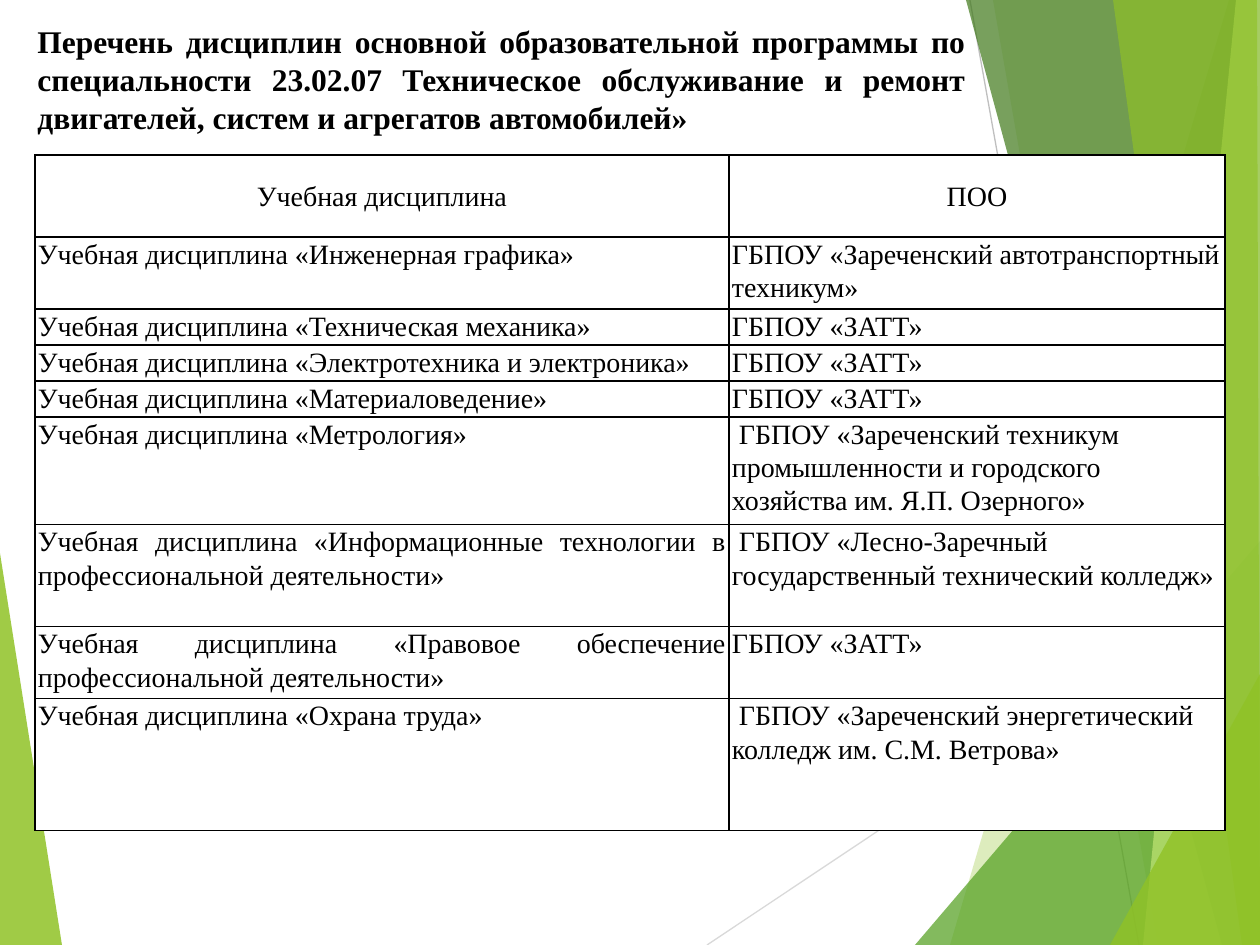
from lxml.etree import SubElement
from pptx import Presentation
from pptx.dml.color import RGBColor
from pptx.enum.shapes import MSO_CONNECTOR
from pptx.enum.text import MSO_ANCHOR as ANCHOR, PP_ALIGN as ALIGN
from pptx.oxml.ns import qn
from pptx.util import Emu, Pt

PX = 914400 / 126
WIDTH, HEIGHT = 1260, 945
FONT = "Times New Roman"
BLACK, WHITE = "000000", "FFFFFF"

TITLE = ("Перечень дисциплин основной образовательной программы по специальности "
         "23.02.07 Техническое обслуживание и ремонт двигателей, систем и агрегатов "
         "автомобилей»")
TITLE_BOX = (25, 16, 953, 181)

HEADINGS = ("Учебная дисциплина", "ПОО")
DISCIPLINES = [
    ("Инженерная графика", "ГБПОУ «Зареченский автотранспортный техникум»", 72),
    ("Техническая механика", "ГБПОУ «ЗАТТ»", 36),
    ("Электротехника и электроника", "ГБПОУ «ЗАТТ»", 36),
    ("Материаловедение", "ГБПОУ «ЗАТТ»", 36),
    ("Метрология",
     " ГБПОУ «Зареченский техникум промышленности и городского хозяйства им. Я.П. Озерного»", 106),
    ("Информационные технологии в профессиональной деятельности",
     " ГБПОУ «Лесно-Заречный государственный технический колледж»", 102),
    ("Правовое обеспечение профессиональной деятельности", "ГБПОУ «ЗАТТ»", 72),
    ("Охрана труда", " ГБПОУ «Зареченский энергетический колледж им. С.М. Ветрова»", 132),
]
TABLE_LEFT, TABLE_TOP = 35, 155
COLUMN_WIDTHS = (694, 496)
HEADING_HEIGHT = 82

LEFT_FACET = ([(0, 553), (62, HEIGHT), (0, HEIGHT)], "90C226", 85)
RAYS = [
    ((707, HEIGHT), (WIDTH, 576), "D9D9D9"),
    ((970, 0), (1139, HEIGHT), "BFBFBF"),
]
RIGHT_FACETS = [
    ([(1229, 0), (950, HEIGHT), (WIDTH, HEIGHT), (WIDTH, 0)], "90C226", 30),
    ([(993, 0), (1158, HEIGHT), (WIDTH, HEIGHT), (WIDTH, 0)], "90C226", 20),
    ([(915, HEIGHT), (WIDTH, 541), (WIDTH, HEIGHT)], "54A021", 72),
    ([(966, 0), (1222, HEIGHT), (WIDTH, HEIGHT), (WIDTH, 0)], "3F7819", 70),
    ([(1236, 0), (1143, HEIGHT), (WIDTH, HEIGHT), (WIDTH, 0)], "C0E474", 70),
    ([(1113, 0), (1242, HEIGHT), (WIDTH, HEIGHT), (1257, 0)], "90C226", 65),
    ([(1110, HEIGHT), (WIDTH, 674), (WIDTH, HEIGHT)], "90C226", 80),
]


def px(length):
    return Emu(round(length * PX))


def paint(fill, color):
    fill.solid()
    fill.fore_color.rgb = RGBColor.from_string(color)


def add_facet(slide, points, color, opacity):
    outline = slide.shapes.build_freeform(*points[0], scale=PX)
    outline.add_line_segments(points[1:], close=True)
    facet = outline.convert_to_shape()
    facet.shadow.inherit = False
    facet.line.fill.background()
    paint(facet.fill, color)
    tint = facet.fill._xPr.find(f".//{qn('a:srgbClr')}")
    SubElement(tint, qn("a:alpha"), val=str(opacity * 1000))


def add_ray(slide, start, end, color):
    ray = slide.shapes.add_connector(MSO_CONNECTOR.STRAIGHT, *map(px, start + end))
    ray.line.width = Pt(0.75)
    paint(ray.line.fill, color)
    SubElement(ray._element.spPr, qn("a:effectLst"))


def write(frame, text, size, align, spacing, bold=False):
    frame.word_wrap = True
    paragraph = frame.paragraphs[0]
    paragraph.alignment = align
    paragraph.line_spacing = spacing
    run = paragraph.add_run()
    run.text = text
    for key, value in {"name": FONT, "size": Pt(size), "bold": bold}.items():
        setattr(run.font, key, value)
    paint(run.font.fill, BLACK)


def format_cell(cell, text, align, anchor):
    cell_format = {
        "margin_left": px(3), "margin_right": px(3),
        "margin_top": 0, "margin_bottom": 0, "vertical_anchor": anchor,
    }
    for key, value in cell_format.items():
        setattr(cell, key, value)
    write(cell.text_frame, text, 16, align, 1.07)
    properties = cell._tc.get_or_add_tcPr()
    for side in ("lnL", "lnR", "lnT", "lnB"):
        border = SubElement(properties, qn(f"a:{side}"), w=str(Pt(1)))
        SubElement(SubElement(border, qn("a:solidFill")), qn("a:srgbClr"), val=BLACK)
    paint(cell.fill, WHITE)


def add_disciplines(slide):
    heights = [HEADING_HEIGHT] + [height for _, _, height in DISCIPLINES]
    rows = [HEADINGS] + [(f"Учебная дисциплина «{name}»", college)
                         for name, college, _ in DISCIPLINES]
    table = slide.shapes.add_table(
        len(rows), len(COLUMN_WIDTHS), px(TABLE_LEFT), px(TABLE_TOP),
        px(sum(COLUMN_WIDTHS)), px(sum(heights))).table
    for column, width in zip(table.columns, COLUMN_WIDTHS):
        column.width = px(width)
    for row_index, (texts, height) in enumerate(zip(rows, heights)):
        table.rows[row_index].height = px(height)
        aligns = (ALIGN.JUSTIFY, ALIGN.LEFT) if row_index else (ALIGN.CENTER,) * 2
        anchor = ANCHOR.TOP if row_index else ANCHOR.MIDDLE
        for column_index, (text, align) in enumerate(zip(texts, aligns)):
            format_cell(table.cell(row_index, column_index), text, align, anchor)


def main():
    deck = Presentation()
    deck.slide_width, deck.slide_height = px(WIDTH), px(HEIGHT)
    slide = deck.slides.add_slide(deck.slide_layouts[6])
    paint(slide.background.fill, WHITE)
    add_facet(slide, *LEFT_FACET)
    for ray in RAYS:
        add_ray(slide, *ray)
    for facet in RIGHT_FACETS:
        add_facet(slide, *facet)
    title = slide.shapes.add_textbox(*map(px, TITLE_BOX))
    write(title.text_frame, TITLE, 18, ALIGN.JUSTIFY, 1.0, bold=True)
    add_disciplines(slide)
    deck.save("out.pptx")


if __name__ == "__main__":
    main()
